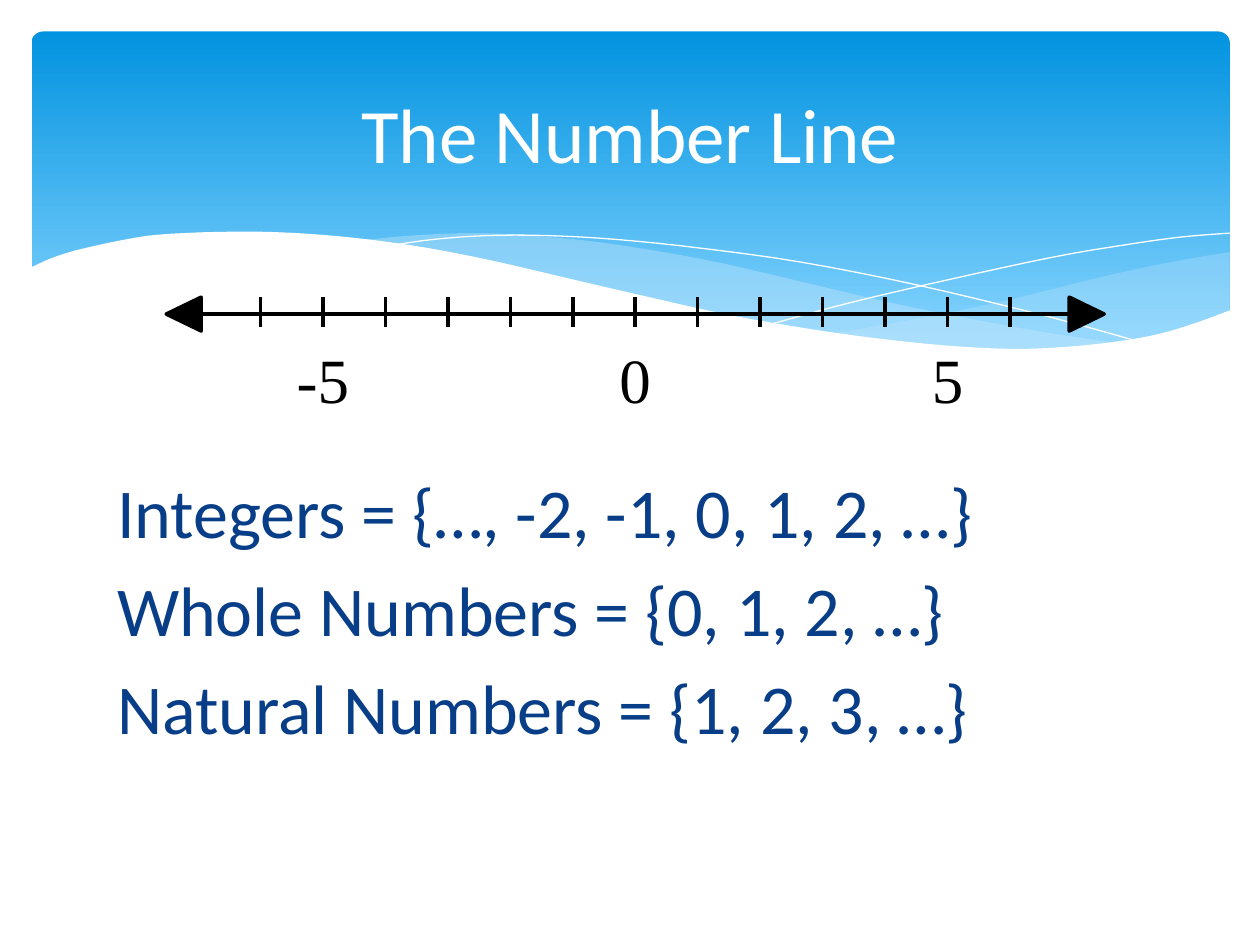
from lxml.etree import SubElement
from pptx import Presentation
from pptx.dml.color import RGBColor
from pptx.enum.shapes import MSO_CONNECTOR, MSO_SHAPE
from pptx.enum.text import MSO_ANCHOR, PP_ALIGN
from pptx.oxml.ns import qn
from pptx.util import Pt

COLORS = {
    "sky": "0293E0",
    "pale_sky": "83D3FE",
    "haze": "C6E7FC",
    "white": "FFFFFF",
    "navy": "073E87",
    "black": "000000",
}

# Wave outlines, in points from the top left corner of the banner
RIGHT_HAZE_TOP = [(684.7, 126), (655.2, 131), (623.5, 137.5), (601.9, 142.6),
                  (561.6, 152.6), (524.2, 160.6), (490.3, 167), (457.9, 172.8)]
RIGHT_HAZE_BOTTOM = [(457.9, 172.8), (489.6, 177.1), (518.4, 180), (544.3, 181.4),
                     (568.1, 182.2), (596.9, 180.7), (622.1, 177.8), (645.1, 172.8),
                     (665.3, 167), (684.7, 159.8)]
LONG_HAZE_TOP = [(625, 178.6), (584.6, 172.8), (540, 164.9), (490.3, 154.8),
                 (434.9, 141.8), (391.7, 131.8), (352.1, 124.6), (316.8, 119.5),
                 (284.4, 116.6), (255.6, 115.2), (229.7, 115.9), (207.4, 117.4),
                 (187.9, 119.5)]
LONG_HAZE_BOTTOM = [(187.9, 119.5), (228.2, 125.3), (272.9, 133.9), (305.3, 141.8),
                    (363.6, 154.8), (414.7, 165.6), (460.8, 173.5), (501.8, 179.3),
                    (538.6, 181.4), (571, 182.2), (599, 181.4), (625, 178.6)]
FALLING_LINE = [(204.5, 122.4), (229.7, 118.8), (260.6, 116.6), (293.8, 116.6),
                (334.1, 118.8), (382.3, 123.8), (439.9, 131.8), (505.4, 144.7),
                (580.3, 162.7), (635, 177.8)]
RISING_LINE = [(423.4, 167), (465.8, 155.5), (520.6, 142.6), (583.9, 128.9),
               (626.4, 121.7), (657.4, 117.4), (684.7, 115.2)]
WHITE_WAVE = [(685.4, 159.1), (666, 166.3), (644.4, 172.8), (620.6, 177.1),
              (594, 180), (564.5, 181.4), (529.9, 180), (491.8, 176.4),
              (448.6, 170.6), (398.9, 162), (344.2, 149.8), (303.8, 140.4),
              (263.5, 131), (226.8, 123.8), (192.2, 118.8), (162, 115.9),
              (133.9, 114.5), (109.4, 114.5), (87.1, 115.2), (67.7, 116.6),
              (50.4, 119.5), (36.7, 122.4), (24.5, 125.3), (15.1, 128.2),
              (7.9, 131), (-1.4, 135.4)]
WHITE_BASE = [(-1.4, 218.9), (685.4, 218.9)]


def rgb(name):
    return RGBColor.from_string(COLORS[name])


def smooth(points, steps=4):
    """Catmull-Rom curve through the points."""
    padded = [points[0], *points, points[-1]]
    curve = [points[0]]
    for a, b, c, d in zip(padded, padded[1:], padded[2:], padded[3:]):
        for step in range(1, steps + 1):
            t = step / steps
            curve.append(tuple(
                (2 * q + (r - p) * t + (2 * p - 5 * q + 4 * r - s) * t ** 2
                 + (3 * q - p - 3 * r + s) * t ** 3) / 2
                for p, q, r, s in zip(a, b, c, d)))
    return curve


def add_outline(slide, origin, points, fill=None, opacity=None, line=None,
                width=0, close=True):
    left, top = origin
    start, *rest = [(Pt(left + x), Pt(top + y)) for x, y in points]
    builder = slide.shapes.build_freeform(*start)
    builder.add_line_segments(rest, close=close)
    outline = builder.convert_to_shape()
    outline.shadow.inherit = False
    if fill:
        outline.fill.solid()
        outline.fill.fore_color.rgb = rgb(fill)
    else:
        outline.fill.background()
    if opacity:
        color = outline.element.spPr.find(f".//{qn('a:srgbClr')}")
        SubElement(color, qn("a:alpha"), val=str(opacity * 1000))
    if line:
        outline.line.color.rgb = rgb(line)
        outline.line.width = Pt(width)
    else:
        outline.line.fill.background()


def add_stroke(slide, x1, y1, x2, y2):
    stroke = slide.shapes.add_connector(
        MSO_CONNECTOR.STRAIGHT, Pt(x1), Pt(y1), Pt(x2), Pt(y2))
    stroke.line.color.rgb = rgb("black")
    stroke.line.width = Pt(2)
    SubElement(stroke.element.spPr, qn("a:effectLst"))


def place(shape, box):
    for side, length in zip(("left", "top", "width", "height"), box):
        setattr(shape, side, Pt(length))


def write(frame, lines, font, color, frame_format, paragraph_format):
    for name, value in frame_format.items():
        setattr(frame, name, value)
    frame.text = "\n".join(lines)
    for paragraph in frame.paragraphs:
        for name, value in paragraph_format.items():
            setattr(paragraph, name, value)
        for name, value in font.items():
            setattr(paragraph.font, name, value)
        paragraph.font.color.rgb = rgb(color)


def add_banner(slide, box):
    banner = slide.shapes.add_shape(
        MSO_SHAPE.ROUNDED_RECTANGLE, *(Pt(length) for length in box))
    banner.adjustments[0] = 0.034
    banner.shadow.inherit = False
    banner.line.fill.background()
    banner.fill.gradient()
    banner.fill.gradient_angle = 270
    for stop, position, color in zip(
            banner.fill.gradient_stops, (0, 0.9), ("sky", "pale_sky")):
        stop.position = position
        stop.color.rgb = rgb(color)

    # Translucent waves, thin lines, then the white wave that cuts the banner
    origin = box[:2]
    for top, bottom, opacity in ((RIGHT_HAZE_TOP, RIGHT_HAZE_BOTTOM, 29),
                                 (LONG_HAZE_TOP, LONG_HAZE_BOTTOM, 40)):
        add_outline(slide, origin, smooth(top) + smooth(bottom), "haze", opacity)
    for thin_line in (FALLING_LINE, RISING_LINE):
        add_outline(slide, origin, smooth(thin_line), line="white", close=False)
    add_outline(slide, origin, smooth(WHITE_WAVE) + WHITE_BASE, "white")


def add_title(slide, box):
    title = slide.shapes.title
    slide.shapes.element.append(title.element)  # in front of the banner
    place(title, box)
    write(title.text_frame, ["The Number Line"],
          {"size": Pt(44), "name": "Calibri"}, "white",
          {"vertical_anchor": MSO_ANCHOR.MIDDLE, "word_wrap": True},
          {"alignment": PP_ALIGN.CENTER})


def add_number_sets(slide, box):
    number_sets = slide.shapes.add_textbox(*(Pt(length) for length in box))
    write(number_sets.text_frame,
          ["Integers = {…, -2, -1, 0, 1, 2, …}",
           "Whole Numbers = {0, 1, 2, …}",
           "Natural Numbers = {1, 2, 3, …}"],
          {"size": Pt(40), "name": "Calibri"}, "navy",
          {"word_wrap": True}, {"space_before": Pt(8)})


def add_number_line(slide, box):
    left, top, width, height = box
    zero, axis = left + width / 2, top + 9.5
    pitch, tick_height = 35.7, 16.6
    label_width, label_height = 50, 50.4
    head_length, head_half = 20, 9.7

    # Axis with a solid head at each end
    add_stroke(slide, left + 17, axis, left + width - 17, axis)
    for tip, inward in ((left + width, -1), (left, 1)):
        base = inward * head_length
        add_outline(slide, (tip, axis),
                    [(base, -head_half), (base, head_half), (0, 0)],
                    "black", line="black", width=2)

    # Ticks from -6 to 6
    for number in range(-6, 7):
        x = zero + number * pitch
        add_stroke(slide, x, top + tick_height, x, top)

    # Labels centred below their ticks
    for number in (-5, 0, 5):
        x = zero + number * pitch - label_width / 2
        label = slide.shapes.add_textbox(
            Pt(x), Pt(top + height - label_height), Pt(label_width), Pt(label_height))
        write(label.text_frame, [str(number)],
              {"size": Pt(36), "name": "Times New Roman"}, "black",
              {"word_wrap": True, "margin_left": 0, "margin_right": 0},
              {"alignment": PP_ALIGN.CENTER})


def main():
    deck = Presentation()
    deck.slide_width, deck.slide_height = Pt(720), Pt(540)
    slide = deck.slides.add_slide(deck.slide_layouts[5])
    add_banner(slide, (18, 18, 684.7, 194.4))
    add_title(slide, (36, 26.6, 648, 98.6))
    add_number_sets(slide, (59.8, 264.2, 581.8, 192.2))
    add_number_line(slide, (95, 170, 536, 71.2))
    deck.save("out.pptx")


if __name__ == "__main__":
    main()
